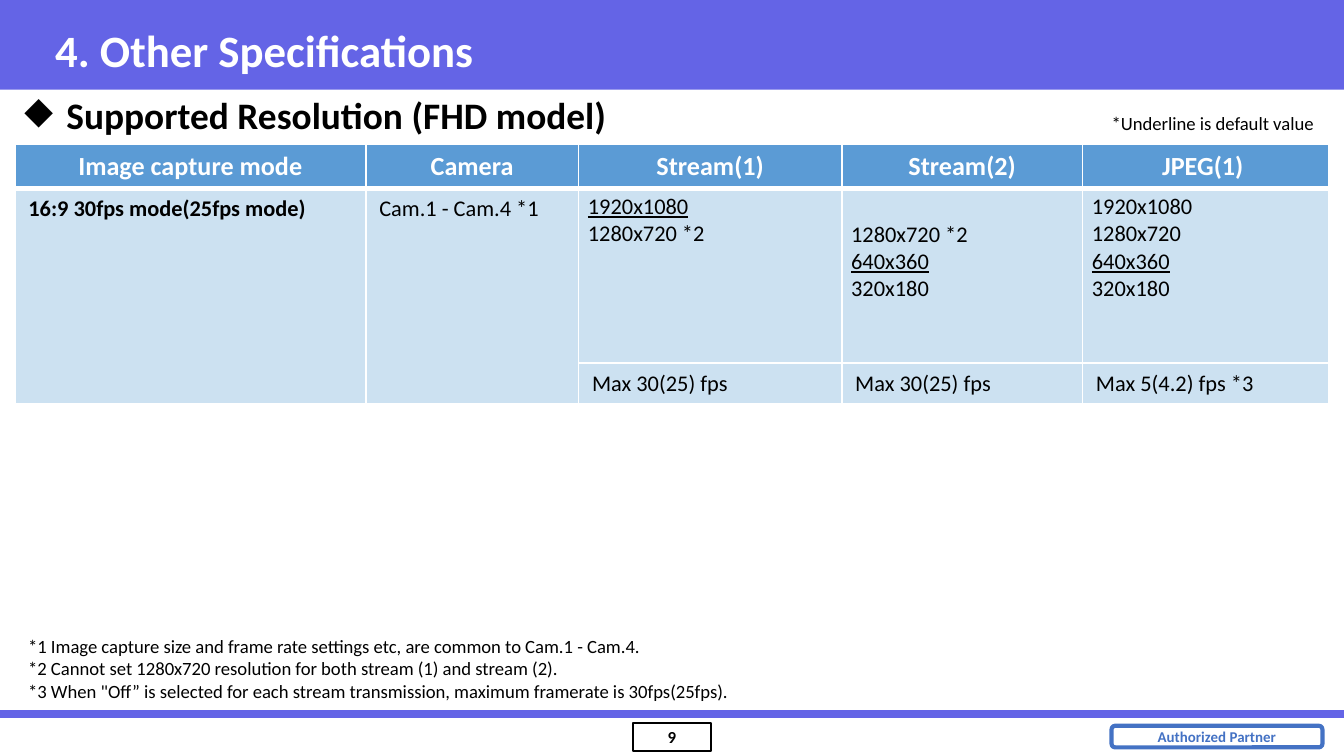
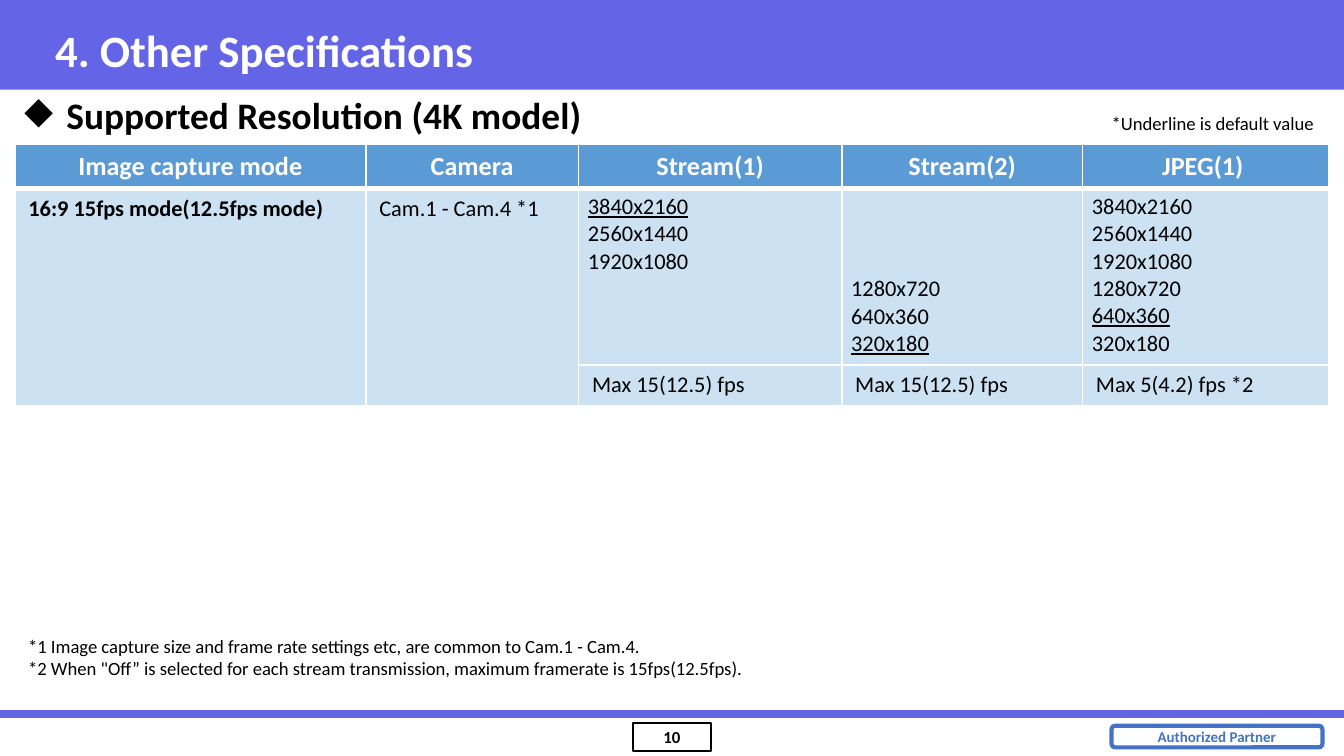
from lxml import etree
from pptx import Presentation
from pptx.dml.color import RGBColor
from pptx.enum.shapes import MSO_CONNECTOR, MSO_SHAPE
from pptx.enum.text import MSO_ANCHOR, PP_ALIGN
from pptx.oxml.ns import qn
from pptx.util import Pt

RECT, ROUND = MSO_SHAPE.RECTANGLE, MSO_SHAPE.ROUNDED_RECTANGLE
LINE = MSO_CONNECTOR.STRAIGHT
TOP, MID, LOW = MSO_ANCHOR.TOP, MSO_ANCHOR.MIDDLE, MSO_ANCHOR.BOTTOM
LEFT, CENTER = PP_ALIGN.LEFT, PP_ALIGN.CENTER

FONT = "Calibri"
WHITE, BLACK = "FFFFFF", "000000"
BAND, BADGE = "6464E6", "4472C4"
HEAD, BODY = "5B9BD5", "CCE1F1"
STEP = 14.65

ink = RGBColor.from_string


def write(frame, lines, size, color=BLACK, bold=False, align=LEFT, mark=None):
    for i, line in enumerate(lines):
        para = frame.add_paragraph() if i else frame.paragraphs[0]
        para.alignment = align
        run = para.add_run()
        run.text = line
        font = run.font
        font.name, font.size, font.bold = FONT, Pt(size), bold
        font.color.rgb = ink(color)
        if line == mark:
            font.underline = True


def label(slide, area, lines, size, color=BLACK, bold=False, anchor=TOP, wrap=True):
    frame = slide.shapes.add_textbox(*map(Pt, area)).text_frame
    frame.word_wrap = wrap
    frame.vertical_anchor = anchor
    write(frame, lines, size, color, bold)
    return frame


heads = ["Image capture mode", "Camera", "Stream(1)", "Stream(2)", "JPEG(1) "]
widths = [188, 114, 141, 129, 132]
common = "*1 Image capture size and frame rate settings etc, are common to Cam.1 - Cam.4."

pages = [
    {
        "page": "9",
        "model": "FHD",
        "mode": "16:9 30fps mode(25fps mode)",
        "sizes": [
            (0, "1920x1080", ["1920x1080", "1280x720 *2"]),
            (1, "640x360", ["1280x720 *2", "640x360", "320x180"]),
            (0, "640x360", ["1920x1080", "1280x720", "640x360", "320x180"]),
        ],
        "rates": ["Max 30(25) fps", "Max 30(25) fps", "Max 5(4.2) fps *3"],
        "rows": [24, 93.6, 21],
        "notes": [
            common,
            "*2 Cannot set 1280x720 resolution for both stream (1) and stream (2).",
            "*3 When \"Off” is selected for each stream transmission, maximum framerate is 30fps(25fps).",
        ],
        "span": (395, 44),
    },
    {
        "page": "10",
        "model": "4K",
        "mode": "16:9 15fps mode(12.5fps mode)",
        "sizes": [
            (0, "3840x2160", ["3840x2160", "2560x1440", "1920x1080"]),
            (3, "320x180", ["1280x720", "640x360", "320x180"]),
            (0, "640x360", ["3840x2160", "2560x1440", "1920x1080",
                            "1280x720", "640x360", "320x180"]),
        ],
        "rates": ["Max 15(12.5) fps", "Max 15(12.5) fps", "Max 5(4.2) fps *2"],
        "rows": [24, 94.5, 21],
        "notes": [
            common,
            "*2 When \"Off” is selected for each stream transmission, maximum framerate is 15fps(12.5fps).",
        ],
        "span": (402.5, 32),
    },
]

deck = Presentation()
deck.slide_width, deck.slide_height = Pt(720), Pt(405)

for data in pages:
    slide = deck.slides.add_slide(deck.slide_layouts[6])
    shapes = slide.shapes

    band = shapes.add_shape(RECT, 0, 0, Pt(720), Pt(48))
    band.shadow.inherit = False
    band.fill.solid()
    band.fill.fore_color.rgb = ink(BAND)
    band.line.fill.background()

    rule = shapes.add_connector(LINE, 0, Pt(382.5), Pt(720), Pt(382.5))
    rule.line.color.rgb = ink(BAND)
    rule.line.width = Pt(4.5)
    etree.SubElement(rule._element.spPr, qn("a:effectLst"))

    for kind, area, text, size, color, width in [
        (RECT, (339, 387.4, 42, 15), data["page"], 9, BLACK, 1),
        (ROUND, (595.5, 388.8, 113, 11.6), "Authorized Partner", 8, BADGE, 2.25),
    ]:
        tag = shapes.add_shape(kind, *map(Pt, area))
        tag.shadow.inherit = False
        tag.fill.background()
        tag.line.color.rgb = ink(color)
        tag.line.width = Pt(width)
        frame = tag.text_frame
        frame.word_wrap = False
        frame.vertical_anchor = MID
        frame.margin_top = frame.margin_bottom = Pt(2)
        write(frame, [text], size, color, True, CENTER)

    label(slide, (22.5, 6, 667, 41.5), ["4. Other Specifications"], 24, WHITE, True, MID)

    topic = f"Supported Resolution ({data['model']} model)"
    frame = label(slide, (6, 45.5, 472, 31.5), [topic], 20, BLACK, True, LOW)
    props = frame.paragraphs[0]._p.get_or_add_pPr()
    props.set("marL", str(Pt(22.5)))
    props.set("indent", str(Pt(-22.5)))
    etree.SubElement(props, qn("a:buChar")).set("char", "◆")

    table = shapes.add_table(3, 5, Pt(8), Pt(77), Pt(sum(widths)), Pt(sum(data["rows"]))).table
    for col, width in zip(table.columns, widths):
        col.width = Pt(width)
    for row, height in zip(table.rows, data["rows"]):
        row.height = Pt(height)

    for r in range(3):
        for c in range(5):
            cell = table.cell(r, c)
            props = cell._tc.get_or_add_tcPr()
            for side in "LRTB":
                thick = (r, side) in [(0, "B"), (1, "T")]
                edge = etree.SubElement(props, qn("a:ln" + side), w=str(Pt(3 if thick else 1)))
                fill = etree.SubElement(edge, qn("a:solidFill"))
                etree.SubElement(fill, qn("a:srgbClr"), val=WHITE)
            cell.fill.solid()
            cell.fill.fore_color.rgb = ink(BODY if r else HEAD)

    for c, head in enumerate(heads):
        write(table.cell(0, c).text_frame, [head], 14, WHITE, True, CENTER)
    for c, text in enumerate([data["mode"], "Cam.1 - Cam.4 *1"]):
        table.cell(1, c).merge(table.cell(2, c))
        write(table.cell(1, c).text_frame, [text], 12, bold=c == 0)
    for c, (skip, mark, sizes) in enumerate(data["sizes"], 2):
        cell = table.cell(1, c)
        cell.margin_left = cell.margin_right = Pt(5)
        cell.margin_top, cell.margin_bottom = Pt(2.6 + skip * STEP), Pt(2.6)
        write(cell.text_frame, sizes, 12, mark=mark)
    for c, rate in enumerate(data["rates"], 2):
        write(table.cell(2, c).text_frame, [rate], 12)

    label(slide, (8, 336.5, *data["span"]), data["notes"], 10, wrap=False)
    label(slide, (588.5, 56.5, 124.5, 19.5), ["*Underline is default value"], 10, wrap=False)

deck.save("out.pptx")
